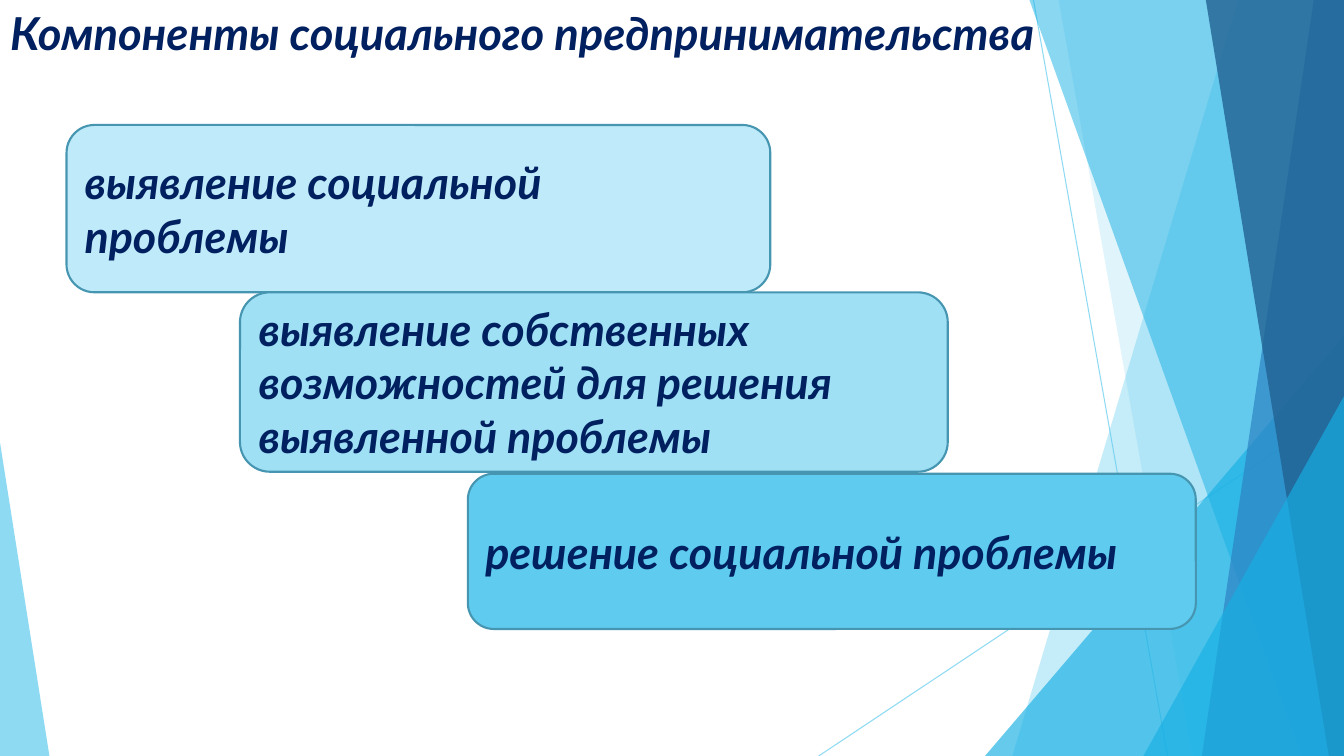
"""Build a slide with three stepped boxes beside a band of blue facets."""
import pptx
import pptx.util
import pptx.dml.color
import pptx.enum.shapes
import pptx.enum.text
import pptx.oxml
import pptx.oxml.ns
import lxml.etree

Inches = pptx.util.Inches
RGBColor = pptx.dml.color.RGBColor
Kind = pptx.enum.shapes.MSO_SHAPE
Anchor = pptx.enum.text.MSO_ANCHOR
qn = pptx.oxml.ns.qn

WIDE, HIGH = 13.33, 7.5
NAVY = RGBColor(0x00, 0x20, 0x60)
SKY = RGBColor(0x5F, 0xCB, 0xEF)
AZURE = RGBColor(0x17, 0xB0, 0xE4)
BLUE = RGBColor(0x2E, 0x83, 0xC3)
DEEP = RGBColor(0x22, 0x62, 0x92)
PALE = RGBColor(0xBF, 0xEA, 0xF9)
LIGHT = RGBColor(0x9F, 0xE0, 0xF5)
EDGE = RGBColor(0x46, 0x96, 0xB1)

TITLE = "Компоненты социального предпринимательства"
STEPS = [
    ("выявление социальной проблемы", (0.66, 1.24, 6.98, 1.66), PALE),
    ("выявление собственных возможностей для решения выявленной проблемы",
     (2.38, 2.9, 7.02, 1.78), LIGHT),
    ("решение социальной проблемы", (4.64, 4.7, 7.22, 1.54), SKY),
]
RAYS = [(10.25, 0, 11.58, HIGH), (WIDE, 4.03, 8.12, HIGH)]
# Each facet: kind, geometry, colour, opacity
FACETS = [
    ("band", (12.28, 10.04), SKY, 36),
    ("band", (10.5, 11.83), SKY, 20),
    ("peak", (9.77, 3.33, WIDE, 1), AZURE, 66),
    ("band", (10.21, 12.91), AZURE, 50),
    ("band", (13.03, 11.92), BLUE, 70),
    ("band", (11.96, 13.18), DEEP, 80),
    ("peak", (11.34, 3.93, WIDE, 1), AZURE, 66),
    ("peak", (0, 4.39, 0.49, 0), SKY, 70),
]


def fade(fill, part):
    """Set the opacity, in percent, of a solid fill inside an element."""
    tone = next(fill.iter(qn("a:srgbClr")))
    lxml.etree.SubElement(tone, qn("a:alpha")).set("val", str(part * 1000))


def write(frame, text, size=32, anchor=Anchor.MIDDLE):
    """Put one left-aligned bold italic paragraph into a text frame."""
    frame.word_wrap = True
    frame.auto_size = pptx.enum.text.MSO_AUTO_SIZE.NONE
    frame.vertical_anchor = anchor
    para = frame.paragraphs[0]
    para.alignment = pptx.enum.text.PP_ALIGN.LEFT
    run = para.add_run()
    run.text = text
    font = run.font
    font.name, font.size = "Lato", pptx.util.Pt(size)
    font.bold = font.italic = True
    font.color.rgb = NAVY


def add_ray(shapes, ends):
    """Draw one thin translucent line."""
    ray = shapes.add_connector(pptx.enum.shapes.MSO_CONNECTOR.STRAIGHT,
                               *map(Inches, ends))
    ray.line.color.rgb = SKY
    ray.line.width = pptx.util.Pt(0.75)
    props = ray.element.spPr
    fade(props, 70)
    lxml.etree.SubElement(props, qn("a:effectLst"))


def add_facet(shapes, kind, geom, color, part):
    """Draw a band reaching the right edge, or a right-angled peak."""
    if kind == "band":
        top, foot = map(Inches, geom)
        right, base = Inches(WIDE), Inches(HIGH)
        form = shapes.build_freeform(top, 0, scale=1.0)
        form.add_line_segments([(right, 0), (right, base), (foot, base)])
        facet = form.convert_to_shape()
    else:
        left, top, right, tip = geom
        area = (left, top, right - left, HIGH - top)
        facet = shapes.add_shape(Kind.ISOSCELES_TRIANGLE, *map(Inches, area))
        facet.adjustments[0] = tip
    facet.shadow.inherit = False
    facet.fill.solid()
    facet.fill.fore_color.rgb = color
    facet.line.fill.background()
    fade(facet.element.spPr, part)


def add_step(shapes, text, area, color):
    """Draw one rounded box with its text."""
    box = shapes.add_shape(Kind.ROUNDED_RECTANGLE, *map(Inches, area))
    box.shadow.inherit = False
    box.fill.solid()
    box.fill.fore_color.rgb = color
    box.line.color.rgb = EDGE
    box.line.width = pptx.util.Pt(1.5)
    write(box.text_frame, text)


def main():
    """Build and save the slide."""
    deck = pptx.Presentation()
    deck.slide_width, deck.slide_height = Inches(WIDE), Inches(HIGH)
    slide = deck.slides.add_slide(deck.slide_layouts[5])
    shapes = slide.shapes
    for ends in RAYS:
        add_ray(shapes, ends)
    for facet in FACETS:
        add_facet(shapes, *facet)
    title = shapes.title
    title.left, title.top = Inches(0), Inches(0)
    title.width, title.height = Inches(11.72), Inches(1.14)
    write(title.text_frame, TITLE, size=32.4, anchor=Anchor.TOP)
    title.element.getparent().append(title.element)
    for step in STEPS:
        add_step(shapes, *step)
    deck.save("out.pptx")


if __name__ == "__main__":
    main()
